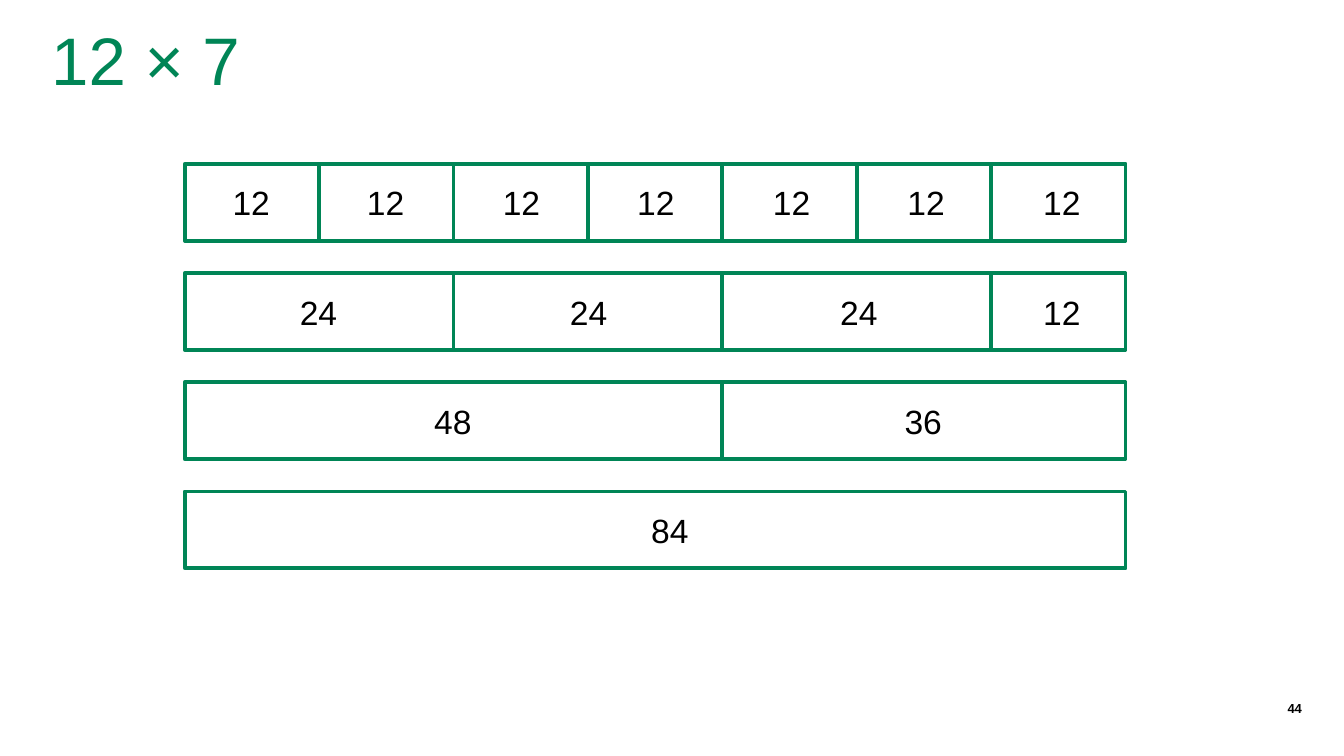
from dataclasses import dataclass

from pptx import Presentation
from pptx.dml.color import RGBColor
from pptx.enum.shapes import MSO_SHAPE
from pptx.enum.text import MSO_ANCHOR, MSO_AUTO_SIZE, PP_ALIGN
from pptx.util import Pt

RECT = MSO_SHAPE.RECTANGLE
TOP, BOTTOM = MSO_ANCHOR.TOP, MSO_ANCHOR.BOTTOM
CENTER, RIGHT = PP_ALIGN.CENTER, PP_ALIGN.RIGHT
FIXED = MSO_AUTO_SIZE.NONE

GREEN = RGBColor(0x00, 0x85, 0x56)
BLACK = RGBColor(0x00, 0x00, 0x00)
WHITE = RGBColor(0xFF, 0xFF, 0xFF)

PX = 9525
UNIT = 12
CELL = 96
LEFT, FIRST = 132, 117
HEIGHT, PITCH = 55, 78
LABEL_W, LABEL_H = 43, 29


@dataclass(frozen=True)
class Box:
    x: int
    y: int
    w: int
    h: int

    def scaled(self) -> list[int]:
        return [n * PX for n in (self.x, self.y, self.w, self.h)]


@dataclass(frozen=True)
class Style:
    size: int
    color: RGBColor
    align: PP_ALIGN = CENTER
    anchor: MSO_ANCHOR = BOTTOM
    bold: bool = False


@dataclass(frozen=True)
class Bar:
    value: int
    shift: int = 0


TITLE = Style(36, GREEN)
LABEL = Style(18, BLACK)
PAGE = Style(7, BLACK, RIGHT, TOP, True)

ROWS = [
    [Bar(12, shift) for shift in (0, 0, 1, 1, 2, 2, 3)],
    [Bar(24), Bar(24, 1), Bar(24, 2), Bar(12, 3)],
    [Bar(48), Bar(36)],
    [Bar(84, 11)],
]


def write(shape, text: str, style: Style) -> None:
    frame = shape.text_frame
    frame.text = text
    frame.word_wrap = True
    frame.auto_size = FIXED
    frame.vertical_anchor = style.anchor
    frame.margin_left = frame.margin_right = 0
    frame.margin_top = frame.margin_bottom = 0
    line = frame.paragraphs[0]
    line.alignment = style.align
    font = line.runs[0].font
    font.name = "Arial"
    font.size = Pt(style.size)
    font.bold = style.bold
    font.color.rgb = style.color


def add_text(slide, box: Box, text: str, style: Style) -> None:
    write(slide.shapes.add_textbox(*box.scaled()), text, style)


def add_bar(slide, bar: Bar, x: int, y: int, width: int) -> None:
    shape = slide.shapes.add_shape(RECT, *Box(x, y, width, HEIGHT).scaled())
    shape.shadow.inherit = False
    shape.fill.solid()
    shape.fill.fore_color.rgb = WHITE
    shape.line.color.rgb = GREEN
    shape.line.width = Pt(2)
    left = x + (width - LABEL_W) // 2 + bar.shift
    top = y + (HEIGHT - LABEL_H) // 2
    add_text(slide, Box(left, top, LABEL_W, LABEL_H), str(bar.value), LABEL)


def add_row(slide, bars: list[Bar], y: int) -> None:
    x = LEFT
    for bar in bars:
        width = bar.value // UNIT * CELL
        add_bar(slide, bar, x, y, width)
        x += width


def main() -> None:
    deck = Presentation()
    deck.slide_width, deck.slide_height = 960 * PX, 540 * PX
    slide = deck.slides.add_slide(deck.slide_layouts[5])
    title = slide.shapes.title
    title.left, title.top, title.width, title.height = Box(14, 12, 180, 59).scaled()
    write(title, "12 × 7", TITLE)
    for i, bars in enumerate(ROWS):
        add_row(slide, bars, FIRST + i * PITCH)
    add_text(slide, Box(835, 500, 95, 29), "44", PAGE)
    deck.save("out.pptx")


if __name__ == "__main__":
    main()
